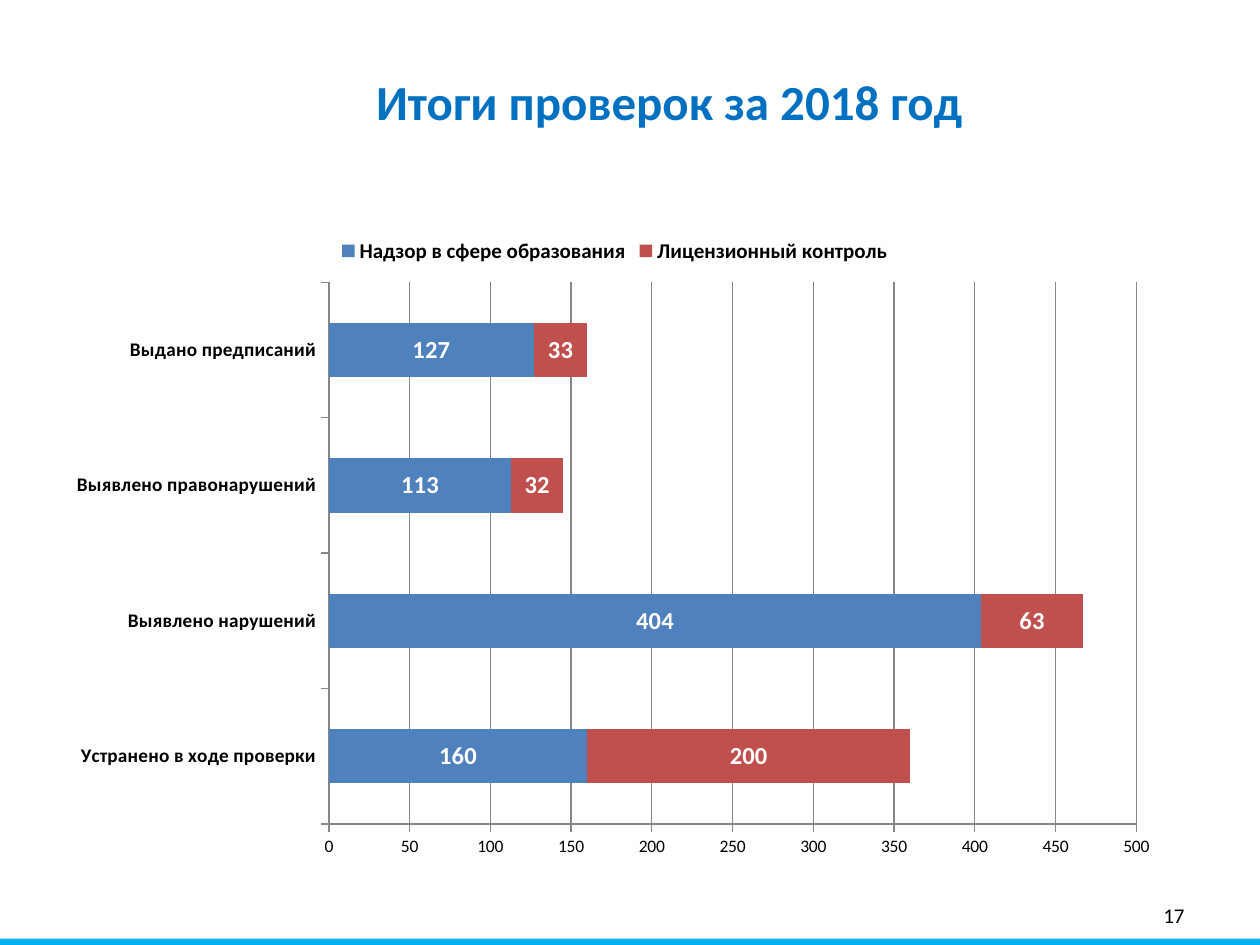
import pptx
import pptx.chart.data
import pptx.dml.color
import pptx.enum.chart
import pptx.enum.shapes
import pptx.enum.text
import pptx.oxml
import pptx.oxml.ns
import pptx.util
from pptx.util import Inches

FONT = "Calibri"
COLORS = {
    "title": "0070C0",
    "strip": "00B0F0",
    "text": "000000",
    "label": "FFFFFF",
    "axis": "868686",
    "supervision": "4F81BD",
    "licensing": "C0504D",
}
CATEGORIES = [
    "Устранено в ходе проверки",
    "Выявлено нарушений",
    "Выявлено правонарушений",
    "Выдано предписаний",
]
SERIES = [
    ("Надзор в сфере образования", (160, 404, 113, 127), "supervision"),
    ("Лицензионный контроль", (200, 63, 32, 33), "licensing"),
]
# Inner plot area as fractions of the chart frame
PLOT_LAYOUT = {"x": 0.245, "y": 0.09, "w": 0.72, "h": 0.84}


def rgb(name):
    return pptx.dml.color.RGBColor.from_string(COLORS[name])


def set_attributes(target, values):
    for name, value in values.items():
        setattr(target, name, value)


def format_font(font, size, color="text", bold=False):
    set_attributes(font, {"name": FONT, "size": pptx.util.Pt(size), "bold": bold})
    font.color.rgb = rgb(color)


def add_text(slide, box, text, size, color, bold, alignment, anchor):
    shape = slide.shapes.add_textbox(*map(Inches, box))
    set_attributes(shape.text_frame, {"word_wrap": True, "vertical_anchor": anchor})
    paragraph = shape.text_frame.paragraphs[0]
    paragraph.alignment = alignment
    run = paragraph.add_run()
    run.text = text
    format_font(run.font, size, color, bold)


def add_strip(slide, box):
    shape = slide.shapes.add_shape(
        pptx.enum.shapes.MSO_SHAPE.RECTANGLE, *map(Inches, box))
    shape.shadow.inherit = False
    shape.fill.solid()
    shape.fill.fore_color.rgb = rgb("strip")
    shape.line.fill.background()


def set_plot_layout(chart):
    plot_area = chart._chartSpace.chart.plotArea
    for old_layout in plot_area.findall(pptx.oxml.ns.qn("c:layout")):
        plot_area.remove(old_layout)
    entries = '<c:layoutTarget val="inner"/><c:xMode val="edge"/><c:yMode val="edge"/>'
    entries += "".join(f'<c:{key} val="{value}"/>' for key, value in PLOT_LAYOUT.items())
    plot_area.insert(0, pptx.oxml.parse_xml(
        f'<c:layout {pptx.oxml.ns.nsdecls("c")}>'
        f"<c:manualLayout>{entries}</c:manualLayout></c:layout>"))


def format_axis(axis, size, bold, gridlines):
    set_attributes(axis, {
        "has_major_gridlines": gridlines,
        "major_tick_mark": pptx.enum.chart.XL_TICK_MARK.OUTSIDE,
        "minor_tick_mark": pptx.enum.chart.XL_TICK_MARK.NONE,
    })
    format_font(axis.tick_labels.font, size, bold=bold)
    lines = [axis.format.line]
    if gridlines:
        lines.append(axis.major_gridlines.format.line)
    for line in lines:
        line.color.rgb = rgb("axis")
        line.width = pptx.util.Pt(0.75)


def format_series(series, color):
    series.format.fill.solid()
    series.format.fill.fore_color.rgb = rgb(color)
    series.data_labels.show_value = True
    format_font(series.data_labels.font, 14, "label", True)


def add_results_chart(slide, box):
    data = pptx.chart.data.CategoryChartData()
    data.categories = CATEGORIES
    for name, values, _ in SERIES:
        data.add_series(name, values)
    chart = slide.shapes.add_chart(
        pptx.enum.chart.XL_CHART_TYPE.BAR_STACKED, *map(Inches, box), data).chart
    chart.has_title = False
    format_font(chart.font, 10)
    set_plot_layout(chart)

    # Legend above the bars
    chart.has_legend = True
    set_attributes(chart.legend, {
        "position": pptx.enum.chart.XL_LEGEND_POSITION.TOP,
        "include_in_layout": False,
    })
    format_font(chart.legend.font, 12, bold=True)

    # Axes
    format_axis(chart.category_axis, 11, True, False)
    format_axis(chart.value_axis, 10, False, True)
    set_attributes(chart.value_axis, {
        "minimum_scale": 0, "maximum_scale": 500, "major_unit": 50})

    # Bars
    plot = chart.plots[0]
    set_attributes(plot, {"gap_width": 150, "overlap": 100, "vary_by_categories": False})
    for series, (_, _, color) in zip(plot.series, SERIES):
        format_series(series, color)


def main():
    presentation = pptx.Presentation()
    set_attributes(presentation, {"slide_width": Inches(10), "slide_height": Inches(7.5)})
    slide = presentation.slides.add_slide(presentation.slide_layouts[6])
    align = pptx.enum.text.PP_ALIGN
    anchor = pptx.enum.text.MSO_ANCHOR

    # Footer
    add_strip(slide, (0, 7.45, 10, 0.05))
    add_text(slide, (7.17, 7.06, 2.33, 0.4), "17", 12, "text", False,
             align.RIGHT, anchor.MIDDLE)

    # Title and chart
    add_text(slide, (1.69, 0.52, 7.24, 0.57), "Итоги проверок за 2018 год", 28,
             "title", True, align.CENTER, anchor.TOP)
    add_results_chart(slide, (0.43, 1.78, 8.9, 5.12))

    presentation.save("out.pptx")


if __name__ == "__main__":
    main()
